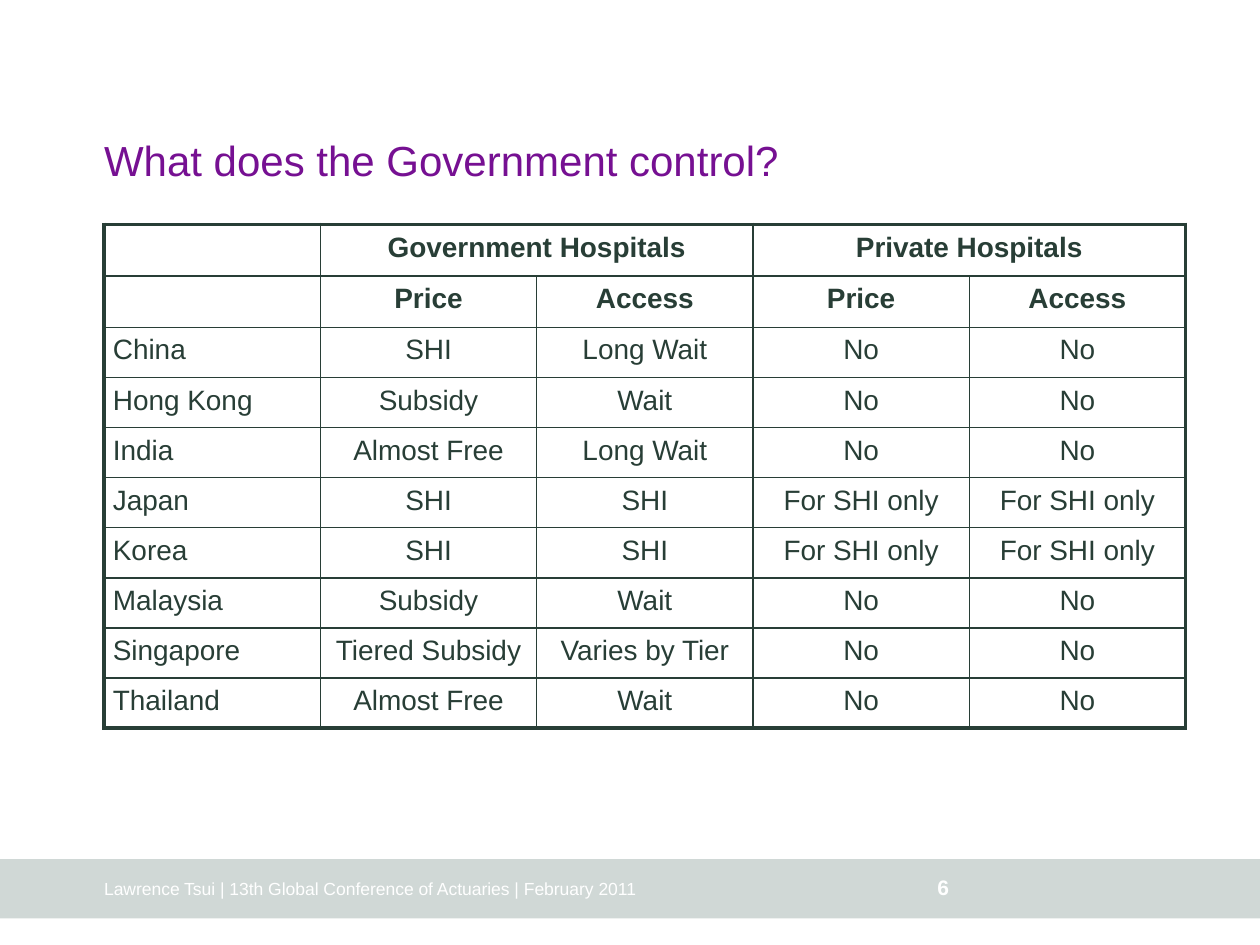
"""Build a slide comparing government control of hospitals across Asia."""
from dataclasses import dataclass

from lxml.etree import SubElement
from pptx import Presentation
from pptx.dml.color import RGBColor as Rgb
from pptx.enum.shapes import MSO_SHAPE as Preset
from pptx.enum.text import MSO_ANCHOR as Anchor, PP_ALIGN as Align
from pptx.oxml.ns import qn
from pptx.util import Pt


@dataclass(frozen=True)
class Theme:
    font: str = "Arial"
    ink: str = "283E36"
    title: str = "761092"
    band: str = "D0D8D6"
    light: str = "FFFFFF"
    title_size: float = 24
    table_size: float = 16
    number_size: float = 12
    footer_size: float = 10
    outer_line: float = 2.25
    inner_line: float = 1
    cell_inset: float = 5.04


@dataclass(frozen=True)
class Label:
    text: str
    left: float
    top: float
    width: float
    height: float
    size: float
    color: str
    bold: bool = False
    wrap: bool = False
    line_spacing: float = 1.0


THEME = Theme()
SLIDE_WIDTH, SLIDE_HEIGHT = 720, 540
LEFT_EDGE = 59.5
TABLE_TOP, COLUMN_WIDTH = 128.2, 123.6
HEADER_ROWS, HEADER_HEIGHT, COUNTRY_HEIGHT = 2, 29.4, 28.65

CONTROLS = [
    ("", "Government Hospitals", "", "Private Hospitals", ""),
    ("", "Price", "Access", "Price", "Access"),
    ("China", "SHI", "Long Wait", "No", "No"),
    ("Hong Kong", "Subsidy", "Wait", "No", "No"),
    ("India", "Almost Free", "Long Wait", "No", "No"),
    ("Japan", "SHI", "SHI", "For SHI only", "For SHI only"),
    ("Korea", "SHI", "SHI", "For SHI only", "For SHI only"),
    ("Malaysia", "Subsidy", "Wait", "No", "No"),
    ("Singapore", "Tiered Subsidy", "Varies by Tier", "No", "No"),
    ("Thailand", "Almost Free", "Wait", "No", "No"),
]

LABELS = [
    Label("Lawrence Tsui | 13th Global Conference of Actuaries | February 2011",
          LEFT_EDGE, 502.6, 465, 11, THEME.footer_size, THEME.light),
    Label("6", 535.7, 499.7, 14.4, 14.4, THEME.number_size, THEME.light, bold=True),
    Label("What does the Government control?", LEFT_EDGE, 37.4, 459.4, 68.4,
          THEME.title_size, THEME.title, wrap=True, line_spacing=0.9),
]


def style_runs(paragraph, size: float, color: str, bold: bool) -> None:
    """Apply the theme font to every run of a paragraph."""
    for run in paragraph.runs:
        run.font.name = THEME.font
        run.font.size = Pt(size)
        run.font.bold = bold
        run.font.color.rgb = Rgb.from_string(color)


def draw_label(slide, label: Label) -> None:
    """Draw a bottom-anchored text box without insets."""
    box = slide.shapes.add_textbox(
        Pt(label.left), Pt(label.top), Pt(label.width), Pt(label.height))
    frame = box.text_frame
    frame.margin_left = frame.margin_right = frame.margin_top = frame.margin_bottom = 0
    frame.vertical_anchor = Anchor.BOTTOM
    frame.word_wrap = label.wrap
    frame.text = label.text
    paragraph = frame.paragraphs[0]
    paragraph.line_spacing = label.line_spacing
    style_runs(paragraph, label.size, label.color, label.bold)


def draw_footer_band(slide) -> None:
    """Draw the full-width band behind the footer."""
    band = slide.shapes.add_shape(
        Preset.RECTANGLE, 0, Pt(491), Pt(SLIDE_WIDTH), Pt(33.8))
    band.shadow.inherit = False
    band.fill.solid()
    band.fill.fore_color.rgb = Rgb.from_string(THEME.band)
    band.line.fill.background()


def set_borders(cell, outer_sides: dict[str, bool]) -> None:
    """Draw the four cell borders, heavier on the table's outer sides."""
    properties = cell._tc.get_or_add_tcPr()
    for side, is_outer in outer_sides.items():
        width = THEME.outer_line if is_outer else THEME.inner_line
        border = SubElement(properties, qn(f"a:ln{side}"), w=str(Pt(width)))
        fill = SubElement(border, qn("a:solidFill"))
        SubElement(fill, qn("a:srgbClr"), val=THEME.ink)


def fill_cell(cell, text: str, centred: bool, bold: bool) -> None:
    """Write and format the text of one cell."""
    inset = Pt(THEME.cell_inset)
    cell.margin_left = cell.margin_right = cell.margin_top = cell.margin_bottom = inset
    cell.text_frame.text = text
    paragraph = cell.text_frame.paragraphs[0]
    paragraph.alignment = Align.CENTER if centred else Align.LEFT
    paragraph.line_spacing = 0.96
    style_runs(paragraph, THEME.table_size, THEME.ink, bold)


def draw_controls(slide) -> None:
    """Draw the table of price and access control by country."""
    row_count, column_count = len(CONTROLS), len(CONTROLS[0])
    heights = [HEADER_HEIGHT if row < HEADER_ROWS else COUNTRY_HEIGHT
               for row in range(row_count)]
    table = slide.shapes.add_table(
        row_count, column_count, Pt(LEFT_EDGE), Pt(TABLE_TOP),
        Pt(COLUMN_WIDTH * column_count), Pt(sum(heights))).table
    table.first_row = table.horz_banding = False
    for column in table.columns:
        column.width = Pt(COLUMN_WIDTH)
    for row, height in zip(table.rows, heights):
        row.height = Pt(height)
    for start in (1, 3):
        table.cell(0, start).merge(table.cell(0, start + 1))

    for row, entries in enumerate(CONTROLS):
        for column, entry in enumerate(entries):
            cell = table.cell(row, column)
            set_borders(cell, {
                "L": column == 0,
                "R": column + cell.span_width == column_count,
                "T": row == 0,
                "B": row == row_count - 1,
            })
            cell.fill.background()
            if entry:
                fill_cell(cell, entry, centred=column > 0, bold=row < HEADER_ROWS)


def main() -> None:
    """Build and save the slide."""
    deck = Presentation()
    deck.slide_width, deck.slide_height = Pt(SLIDE_WIDTH), Pt(SLIDE_HEIGHT)
    slide = deck.slides.add_slide(deck.slide_layouts[6])
    draw_footer_band(slide)
    draw_controls(slide)
    for label in LABELS:
        draw_label(slide, label)
    deck.save("out.pptx")


if __name__ == "__main__":
    main()
